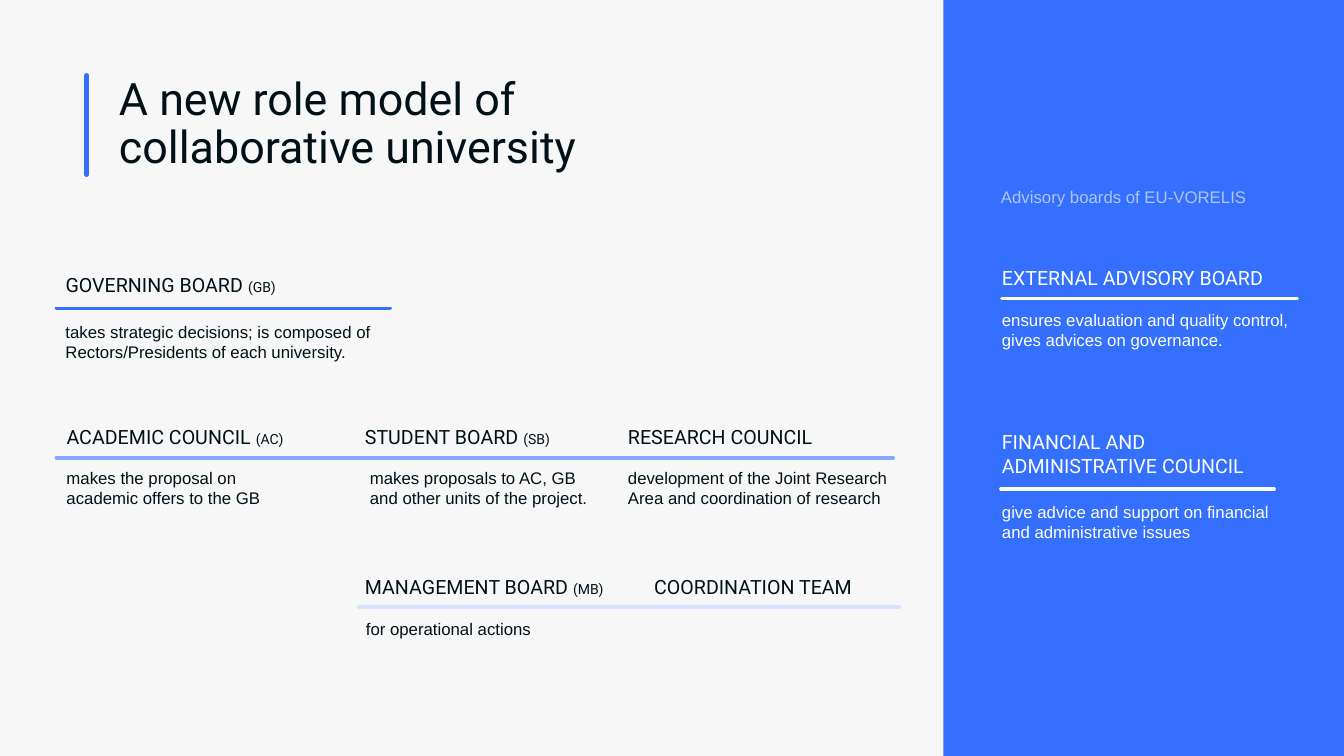
from dataclasses import dataclass

from lxml.etree import SubElement
from pptx import Presentation
from pptx.dml.color import RGBColor
from pptx.enum.shapes import MSO_CONNECTOR as Connector, MSO_SHAPE as Shape
from pptx.enum.text import MSO_ANCHOR as Anchor, MSO_AUTO_SIZE as AutoSize, PP_ALIGN as Align
from pptx.oxml.ns import qn
from pptx.util import Inches, Pt


@dataclass(frozen=True)
class Theme:
    paper: str = "F7F7F7"
    ink: str = "011117"
    white: str = "FEFFFF"
    blue: str = "346FFD"
    mid_blue: str = "85A9FE"
    pale_blue: str = "D6E2FF"
    caption: str = "AEC5FE"
    display: str = "Roboto"
    text: str = "Arial"
    title_size: float = 32
    heading_size: float = 14
    detail_size: float = 12
    short_size: float = 10
    accent_width: float = 3.75
    rule_width: float = 2.75
    side_rule_width: float = 2.5


class Board:
    columns = 160
    rows = 90

    def __init__(self, deck, theme):
        self.theme = theme
        self.column = deck.slide_width / self.columns
        self.row = deck.slide_height / self.rows
        self.page = deck.slides.add_slide(deck.slide_layouts[6])
        self.shapes = self.page.shapes
        fill = self.page.background.fill
        fill.solid()
        fill.fore_color.rgb = RGBColor.from_string(theme.paper)

    def across(self, columns):
        return round(columns * self.column)

    def down(self, rows):
        return round(rows * self.row)

    def area(self, left, top, width, height):
        return self.across(left), self.down(top), self.across(width), self.down(height)

    def start_group(self):
        self.shapes = self.page.shapes.add_group_shape().shapes

    def end_group(self):
        self.shapes = self.page.shapes

    def panel(self, left, top, width, height, color):
        shape = self.shapes.add_shape(Shape.RECTANGLE, *self.area(left, top, width, height))
        shape.shadow.inherit = False
        shape.fill.solid()
        shape.fill.fore_color.rgb = RGBColor.from_string(color)
        shape.line.fill.background()

    def rule(self, start, end, color, width):
        line = self.shapes.add_connector(
            Connector.STRAIGHT,
            self.across(start[0]), self.down(start[1]),
            self.across(end[0]), self.down(end[1]),
        )
        line.line.color.rgb = RGBColor.from_string(color)
        line.line.width = Pt(width)
        line.line._get_or_add_ln().set("cap", "rnd")
        SubElement(line._element.spPr, qn("a:effectLst"))

    def text(self, area, runs, font, color, spacing=None, grow=True):
        box = self.shapes.add_textbox(*self.area(*area))
        frame = box.text_frame
        frame.word_wrap = True
        frame.auto_size = AutoSize.SHAPE_TO_FIT_TEXT if grow else AutoSize.NONE
        frame.vertical_anchor = Anchor.TOP
        frame.margin_left = frame.margin_right = 0
        frame.margin_top = frame.margin_bottom = Inches(0.05)
        para = frame.paragraphs[0]
        para.alignment = Align.LEFT
        if spacing:
            para.line_spacing = spacing
        for words, size in runs:
            for index, part in enumerate(words.split("\n")):
                if index:
                    para.add_line_break()
                span = para.add_run()
                span.text = part
                span.font.name = font
                span.font.size = Pt(size)
                span.font.color.rgb = RGBColor.from_string(color)

    def title(self, area, words):
        self.text(area, [(words, self.theme.title_size)], self.theme.display,
                  self.theme.ink, spacing=0.9, grow=False)

    def heading(self, left, top, width, name, short="", color=None, height=4.08):
        runs = [(name, self.theme.heading_size)]
        if short:
            runs = [(name + " ", self.theme.heading_size), (short, self.theme.short_size)]
        self.text((left, top, width, height), runs, self.theme.display, color or self.theme.ink)

    def detail(self, left, top, width, words, color=None, height=6):
        self.text((left, top, width, height), [(words, self.theme.detail_size)],
                  self.theme.text, color or self.theme.ink)


def main():
    deck = Presentation()
    deck.slide_width, deck.slide_height = Inches(13.33), Inches(7.5)
    theme = Theme()
    board = Board(deck, theme)

    board.panel(112.32, 0, 47.68, 90, theme.blue)
    board.title((14.16, 8.52, 65.16, 12.24), "A new role model of\ncollaborative university")
    board.rule((10.32, 9), (10.32, 20.76), theme.blue, theme.accent_width)

    for start, end, row, color in (
        (6.72, 46.44, 36.72, theme.blue),
        (6.72, 106.32, 54.48, theme.mid_blue),
        (42.72, 107.04, 72.24, theme.pale_blue),
    ):
        board.rule((start, row), (end, row), color, theme.rule_width)

    for left, top, width, name, short in (
        (7.8, 31.92, 31.92, "GOVERNING BOARD", "(GB)"),
        (7.92, 50.04, 29.52, "ACADEMIC COUNCIL", "(AC)"),
        (43.44, 50.04, 25.32, "STUDENT BOARD", "(SB)"),
        (74.76, 50.04, 24.96, "RESEARCH COUNCIL", ""),
        (43.44, 67.8, 31.68, "MANAGEMENT BOARD", "(MB)"),
        (77.88, 67.8, 26.52, "COORDINATION TEAM", ""),
    ):
        board.heading(left, top, width, name, short)

    for left, top, width, words in (
        (7.8, 37.68, 48.24 - 7.8,
         "takes strategic decisions; is composed of Rectors/Presidents of each university."),
        (7.92, 55.08, 26.04, "makes the proposal on academic offers to the GB"),
        (44.04, 55.08, 27.96, "makes proposals to AC, GB and other units of the project."),
        (74.76, 55.08, 32.88,
         "development of the Joint Research Area and coordination of research"),
        (43.56, 73.08, 24.96, "for operational actions"),
    ):
        board.detail(left, top, width, words)

    side = 119.28
    board.detail(119.16, 21.6, 33.12, "Advisory boards of EU-VORELIS", theme.caption, 3.6)
    for name, words, top, height, rule_row, detail_row, start, end, width in (
        ("EXTERNAL ADVISORY BOARD",
         "ensures evaluation and quality control, gives advices on governance.",
         31.08, 4.08, 35.52, 36.24, side, 154.44, 35.16),
        ("FINANCIAL AND\nADMINISTRATIVE COUNCIL",
         "give advice and support on financial and administrative issues",
         50.64, 6.84, 58.2, 59.16, 119.16, 151.68, 32.16),
    ):
        board.start_group()
        board.heading(side, top, 36, name, color=theme.white, height=height)
        board.detail(side, detail_row, width, words, theme.white)
        board.rule((start, rule_row), (end, rule_row), theme.white, theme.side_rule_width)
        board.end_group()

    deck.save("out.pptx")


if __name__ == "__main__":
    main()
